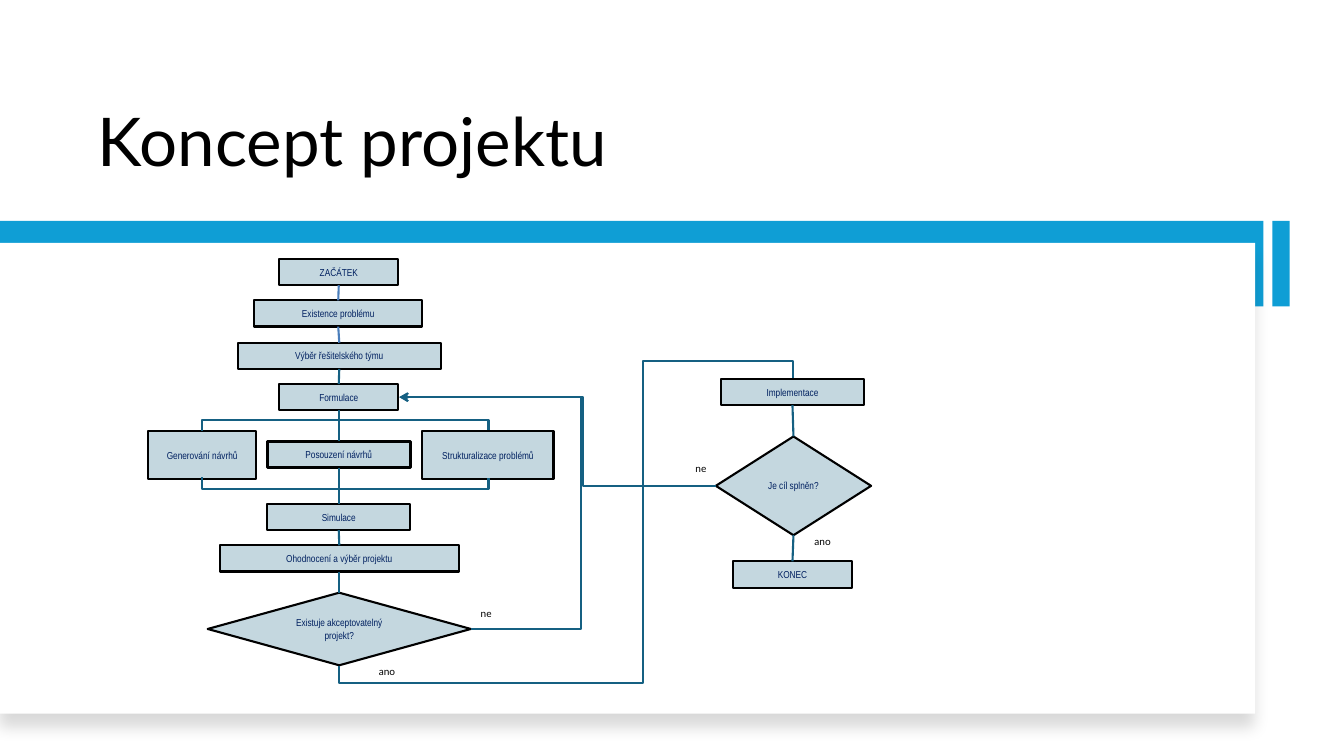
"""Build the project concept slide: a title, a framed panel and a decision flowchart."""
from lxml import etree
from pptx import Presentation
from pptx.dml.color import RGBColor
from pptx.enum.shapes import MSO_CONNECTOR, MSO_SHAPE
from pptx.enum.text import MSO_ANCHOR, PP_ALIGN
from pptx.oxml import parse_xml
from pptx.oxml.ns import nsdecls, qn
from pptx.util import Inches, Pt

RECTANGLE = MSO_SHAPE.RECTANGLE
PROCESS = MSO_SHAPE.FLOWCHART_PROCESS
DECISION = MSO_SHAPE.FLOWCHART_DECISION
STRAIGHT, ELBOW = MSO_CONNECTOR.STRAIGHT, MSO_CONNECTOR.ELBOW
MIDDLE, BOTTOM_ANCHOR = MSO_ANCHOR.MIDDLE, MSO_ANCHOR.BOTTOM
CENTER = PP_ALIGN.CENTER
TOP, LEFT, BOTTOM, RIGHT = range(4)
BLACK, WHITE, SKY, TEAL, BLUE, NAVY = "000000", "FFFFFF", "0F9ED5", "156082", "4A7EBB", "002060"


def color(hex_code):
    return RGBColor.from_string(hex_code)


def write(shape, text, size, font, hex_code, space_after):
    paragraph = shape.text_frame.paragraphs[0]
    paragraph.space_after = Pt(space_after)
    run = paragraph.add_run()
    run.text = text
    for name, value in {"size": Pt(size), "name": font}.items():
        setattr(run.font, name, value)
    run.font.color.rgb = color(hex_code)
    return paragraph


prs = Presentation()
prs.slide_width, prs.slide_height = Inches(13.33), Inches(7.5)
slide = prs.slides.add_slide(prs.slide_layouts[6])
shapes = slide.shapes

title = shapes.add_textbox(Inches(0.87), Inches(0.42), Inches(11.01), Inches(1.42))
title.text_frame.word_wrap = True
title.text_frame.vertical_anchor = BOTTOM_ANCHOR
write(title, "Koncept projektu", 48, "Lato", BLACK, 6).line_spacing = 0.9

frame_parts = [
    (0, 2.19, 12.53, 0.85, 0, SKY),
    (0, 2.41, 12.45, 4.67, 0, WHITE),
    (12.28, 2.53, 0.85, 0.17, 90, SKY),
]
for left, top, width, height, rotation, fill in frame_parts:
    part = shapes.add_shape(RECTANGLE, Inches(left), Inches(top), Inches(width), Inches(height))
    part.rotation = rotation
    part.fill.solid()
    part.fill.fore_color.rgb = color(fill)
    part.line.fill.background()
    part.shadow.inherit = False
    if fill == WHITE:
        effects = part.element.spPr.find(qn("a:effectLst"))
        effects.append(parse_xml(
            f'<a:outerShdw {nsdecls("a")} blurRad="{Pt(11)}" dist="{Pt(10)}" dir="5400000" '
            'algn="t" rotWithShape="0"><a:srgbClr val="000000"><a:alpha val="15000"/>'
            '</a:srgbClr></a:outerShdw>'))

steps = [
    ("ZAČÁTEK", PROCESS, 2.77, 2.57, 1.18, 0.26),
    ("Existence problému", PROCESS, 2.52, 2.98, 1.67, 0.26),
    ("Výběr řešitelského týmu", PROCESS, 2.36, 3.4, 2.01, 0.26),
    ("Formulace", PROCESS, 2.77, 3.81, 1.18, 0.26),
    ("Posouzení návrhů", PROCESS, 2.65, 4.38, 1.42, 0.26),
    ("Generování návrhů", PROCESS, 1.47, 4.28, 1.07, 0.47),
    ("Strukturalizace problémů", PROCESS, 4.19, 4.28, 1.3, 0.47),
    ("Simulace", PROCESS, 2.65, 5, 1.42, 0.26),
    ("Ohodnocení a výběr projektu", PROCESS, 2.18, 5.41, 2.37, 0.26),
    ("Existuje akceptovatelný projekt?", DECISION, 2.06, 5.88, 2.61, 0.72),
    ("Implementace", PROCESS, 7.15, 3.76, 1.42, 0.26),
    ("Je cíl splněn?", DECISION, 7.1, 4.33, 1.54, 0.98),
    ("KONEC", PROCESS, 7.27, 5.57, 1.18, 0.26),
]
nodes = []
for text, kind, left, top, width, height in steps:
    node = shapes.add_shape(kind, Inches(left), Inches(top), Inches(width), Inches(height))
    node.shadow.inherit = False
    node.fill.solid()
    node.fill.fore_color.rgb = color(TEAL)
    fill_color = node.element.spPr.find(qn("a:solidFill"))[0]
    etree.SubElement(fill_color, qn("a:alpha")).set("val", "25000")
    node.line.color.rgb = color(BLACK)
    node.line.width = Pt(1.5)
    node.text_frame.vertical_anchor = MIDDLE
    write(node, text, 7.2, "Arial Narrow", NAVY, 3.8).alignment = CENTER
    nodes.append(node)
(start, problem, team, formulation, review, proposals, structuring, simulation,
 rating, acceptable, implementation, goal_met, finish) = nodes
review.line.width = Pt(2)
review.text_frame.margin_left = review.text_frame.margin_right = Inches(0.06)

links = []
main_flow = [start, problem, team, formulation, review, simulation, rating, acceptable]
closing_flow = [implementation, goal_met, finish]
for flow in (main_flow, closing_flow):
    for upper, lower in zip(flow, flow[1:]):
        link = shapes.add_connector(STRAIGHT, 0, 0, 0, 0)
        link.begin_connect(upper, BOTTOM)
        link.end_connect(lower, TOP)
        link.line.color.rgb = color(BLUE if upper in (start, problem) else TEAL)
        links.append(link)

routes = [
    (proposals, TOP, structuring, TOP, (3.42, 2.85, 0.01, 2.84), 90, "hv", [11], None),
    (proposals, BOTTOM, structuring, BOTTOM, (3.42, 3.32, 0.01, 2.84), 270, "h", [12], None),
    (acceptable, BOTTOM, implementation, TOP, (4.19, 2.93, 2.85, 4.5), 90, "hv",
     [-0.06, 0.67, 1.06], None),
    (acceptable, RIGHT, formulation, RIGHT, (3.96, 3.94, 0.71, 2.3), 0, "hv", [-1.54], "triangle"),
    (goal_met, LEFT, formulation, RIGHT, (3.96, 3.94, 3.14, 0.88), 180, "", [0.42], "arrow"),
]
for source, source_side, target, target_side, box, rotation, flips, bends, arrow in routes:
    link = shapes.add_connector(ELBOW, 0, 0, 0, 0)
    link.begin_connect(source, source_side)
    link.end_connect(target, target_side)
    for name, length in zip(("left", "top", "width", "height"), box):
        setattr(link, name, Inches(length))
    properties = link.element.spPr
    transform = properties.find(qn("a:xfrm"))
    transform.set("rot", str(rotation * 60000))
    transform.set("flipH", str(int("h" in flips)))
    transform.set("flipV", str(int("v" in flips)))
    geometry = properties.find(qn("a:prstGeom"))
    geometry.set("prst", f"bentConnector{len(bends) + 2}")
    guides = geometry.find(qn("a:avLst"))
    for number, bend in enumerate(bends, 1):
        guide = etree.SubElement(guides, qn("a:gd"))
        guide.set("name", f"adj{number}" if len(bends) > 1 else "adj1")
        guide.set("fmla", f"val {round(bend * 100000)}")
    link.line.color.rgb = color(TEAL)
    if arrow:
        etree.SubElement(properties.find(qn("a:ln")), qn("a:tailEnd")).set("type", arrow)
    links.append(link)

for link in links:
    link.line.width = Pt(1.5)
    etree.SubElement(link.element.spPr, qn("a:effectLst"))

answers = [
    ("ne", 4.67, 5.98, 0.37),
    ("ano", 3.66, 6.55, 0.47),
    ("ano", 7.98, 5.26, 0.47),
    ("ne", 6.8, 4.54, 0.37),
]
for text, left, top, width in answers:
    answer = shapes.add_textbox(Inches(left), Inches(top), Inches(width), Inches(0.27))
    answer.text_frame.word_wrap = False
    write(answer, text, 7.2, "Lato", BLACK, 3.8)

prs.save("out.pptx")
